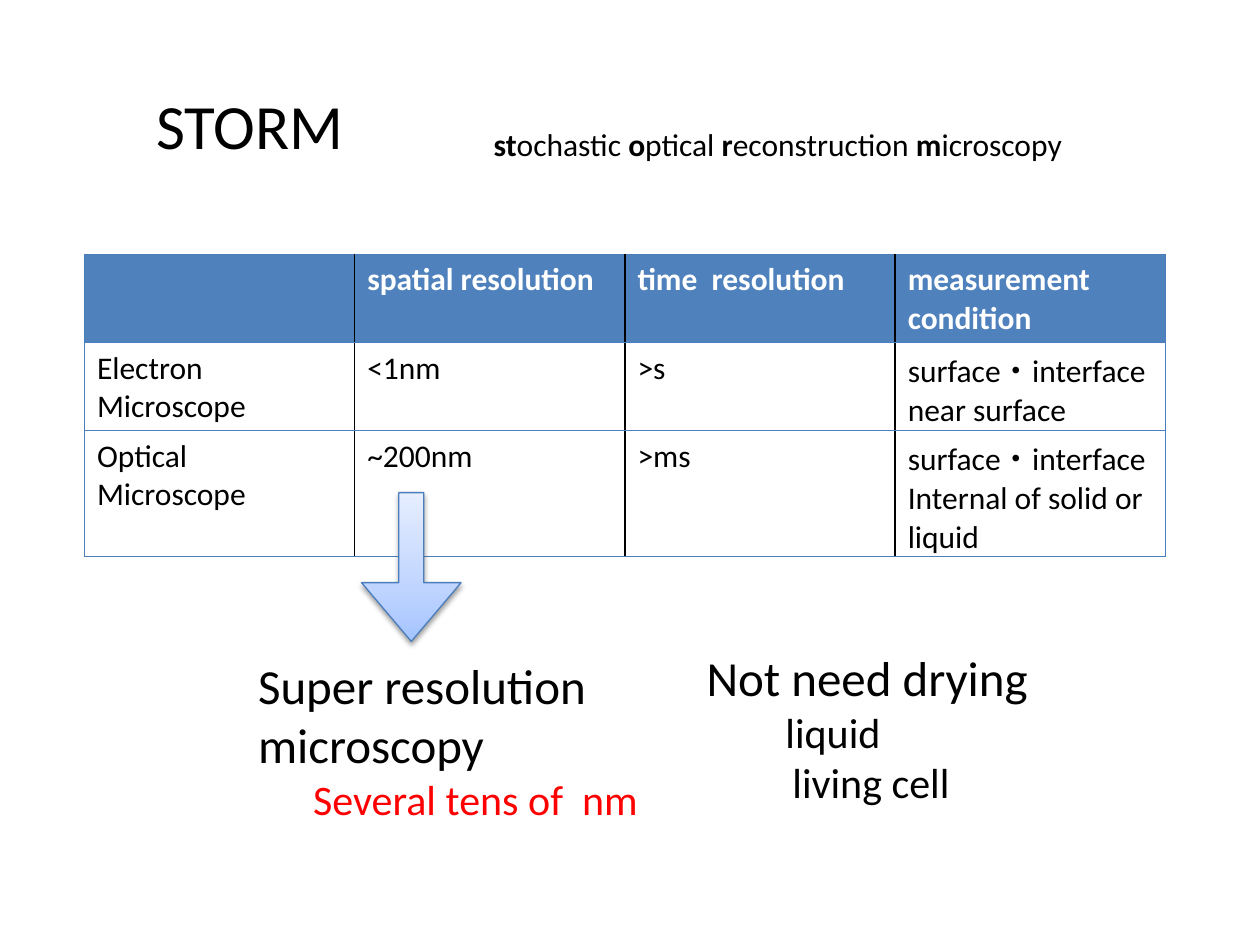
from dataclasses import dataclass

from lxml.etree import SubElement
from pptx import Presentation
from pptx.dml.color import RGBColor
from pptx.enum.shapes import MSO_SHAPE as Preset
from pptx.enum.text import MSO_ANCHOR as Anchor, PP_ALIGN as Align
from pptx.oxml import parse_xml
from pptx.oxml.ns import nsdecls, qn
from pptx.util import Pt

FONT = "Calibri"
COLORS = {
    "text": "000000",
    "header_text": "FFFFFF",
    "header_fill": "4F81BD",
    "outline": "4B7EBC",
    "accent": "FF0000",
    "arrow_dark": "A4C4FF",
    "arrow_mid": "BFD4FF",
    "arrow_light": "E6EEFF",
}


@dataclass(frozen=True)
class Span:
    text: str
    size: float = 18
    color: str = "text"
    bold: bool = False


@dataclass(frozen=True)
class Line:
    spans: tuple[Span, ...]
    indent: float = 0


@dataclass(frozen=True)
class Note:
    left: float
    top: float
    width: float
    height: float
    lines: tuple[Line, ...]
    wrap: bool = True


SUBTITLE = Line((
    Span("st", bold=True), Span("ochastic "),
    Span("o", bold=True), Span("ptical "),
    Span("r", bold=True), Span("econstruction "),
    Span("m", bold=True), Span("icroscopy"),
))
NOTES = (
    Note(275, 67.7, 342, 28.8, (SUBTITLE,), wrap=False),
    Note(140.4, 371.2, 247, 104.4, (
        Line((Span("Super resolution microscopy", 28),)),
        Line((Span("Several tens of  nm", 24, "accent"),), indent=31.5),
    )),
    Note(396.7, 366.5, 294.5, 99.4, (
        Line((Span("Not need drying", 28),)),
        Line((Span("liquid", 24),), indent=45),
        Line((Span("living cell", 24),), indent=49),
    )),
)

# Each cell is a tuple of paragraphs.
COMPARISON = (
    ((), ("spatial resolution",), ("time  resolution",), ("measurement condition",)),
    (("Electron Microscope",), ("<1nm",), (">s",),
     ("surface・interface", "near surface")),
    (("Optical", "Microscope"), ("~200nm",), (">ms",),
     ("surface・interface", "Internal of solid or liquid")),
)
ROW_HEIGHTS = (50.4, 50.4, 72)
COLUMN_WIDTH = 154.44


def rgb(name: str) -> RGBColor:
    return RGBColor.from_string(COLORS[name])


def write_lines(frame, lines: tuple[Line, ...]) -> None:
    for number, line in enumerate(lines):
        paragraph = frame.paragraphs[0] if number == 0 else frame.add_paragraph()
        paragraph.alignment = Align.LEFT
        if line.indent:
            properties = paragraph._p.get_or_add_pPr()
            properties.set("marL", str(Pt(line.indent)))
            properties.set("indent", "0")
        for span in line.spans:
            run = paragraph.add_run()
            run.text = span.text
            run.font.name = FONT
            run.font.size = Pt(span.size)
            run.font.bold = span.bold
            run.font.color.rgb = rgb(span.color)


def add_title(slide) -> None:
    title = slide.shapes.title
    title.left, title.top, title.width, title.height = Pt(82), Pt(46), Pt(607), Pt(51)
    title.text_frame.vertical_anchor = Anchor.TOP
    write_lines(title.text_frame, (Line((Span("STORM", 36),)),))


def add_note(slide, note: Note) -> None:
    box = slide.shapes.add_textbox(
        Pt(note.left), Pt(note.top), Pt(note.width), Pt(note.height))
    box.text_frame.word_wrap = note.wrap
    write_lines(box.text_frame, note.lines)


def set_borders(cell, is_first: bool, is_last: bool) -> None:
    """Black rules between columns, blue ones everywhere else."""
    edges = {
        "L": ("outline", 0.75) if is_first else ("text", 1),
        "R": ("outline", 0.75) if is_last else ("text", 1),
        "T": ("outline", 0.75),
        "B": ("outline", 0.75),
    }
    properties = cell._tc.get_or_add_tcPr()
    for place, (side, (color, width)) in enumerate(edges.items()):
        properties.insert(place, parse_xml(
            f'<a:ln{side} {nsdecls("a")} w="{Pt(width)}"><a:solidFill>'
            f'<a:srgbClr val="{COLORS[color]}"/></a:solidFill></a:ln{side}>'))


def add_comparison(slide) -> None:
    column_count = len(COMPARISON[0])
    table = slide.shapes.add_table(
        len(COMPARISON), column_count, Pt(48.24), Pt(145.44),
        Pt(COLUMN_WIDTH * column_count), Pt(sum(ROW_HEIGHTS))).table
    table.horz_banding = False
    for column in table.columns:
        column.width = Pt(COLUMN_WIDTH)
    for row_number, texts in enumerate(COMPARISON):
        table.rows[row_number].height = Pt(ROW_HEIGHTS[row_number])
        is_header = row_number == 0
        for column_number, paragraphs in enumerate(texts):
            cell = table.cell(row_number, column_number)
            is_last = column_number == column_count - 1
            cell.margin_bottom = Pt(0)
            if is_last and not is_header:
                # The wide middle dot needs the full cell to stay on one line.
                cell.margin_right, cell.margin_top = Pt(0), Pt(1.8)
            if is_header:
                cell.fill.solid()
                cell.fill.fore_color.rgb = rgb("header_fill")
            else:
                cell.fill.background()
            color = "header_text" if is_header else "text"
            write_lines(cell.text_frame, tuple(
                Line((Span(text, color=color, bold=is_header),)) for text in paragraphs))
            set_borders(cell, column_number == 0, is_last)


def add_arrow(slide) -> None:
    arrow = slide.shapes.add_shape(
        Preset.DOWN_ARROW, Pt(206.6), Pt(281.5), Pt(56.9), Pt(85))
    arrow.adjustments[0], arrow.adjustments[1] = 0.25, 0.59
    arrow.line.color.rgb = rgb("outline")
    arrow.line.width = Pt(0.75)

    arrow.fill.gradient()
    arrow.fill.gradient_angle = 90
    properties = arrow._element.spPr
    stops = properties.find(qn("a:gradFill")).find(qn("a:gsLst"))
    for stop in list(stops):
        stops.remove(stop)
    for percent, color in ((0, "arrow_dark"), (35, "arrow_mid"), (100, "arrow_light")):
        stop = SubElement(stops, qn("a:gs"), pos=str(percent * 1000))
        SubElement(stop, qn("a:srgbClr"), val=COLORS[color])

    arrow.shadow.inherit = False
    shadow = SubElement(
        properties.find(qn("a:effectLst")), qn("a:outerShdw"),
        blurRad=str(Pt(3.1)), dist=str(Pt(1.6)), dir="5400000", rotWithShape="0")
    shade = SubElement(shadow, qn("a:srgbClr"), val=COLORS["text"])
    SubElement(shade, qn("a:alpha"), val="38000")


def main() -> None:
    deck = Presentation()
    deck.slide_width, deck.slide_height = Pt(720), Pt(540)
    slide = deck.slides.add_slide(deck.slide_layouts.get_by_name("Title Only"))
    add_title(slide)
    add_comparison(slide)
    add_arrow(slide)
    for note in NOTES:
        add_note(slide, note)
    deck.save("out.pptx")


if __name__ == "__main__":
    main()
